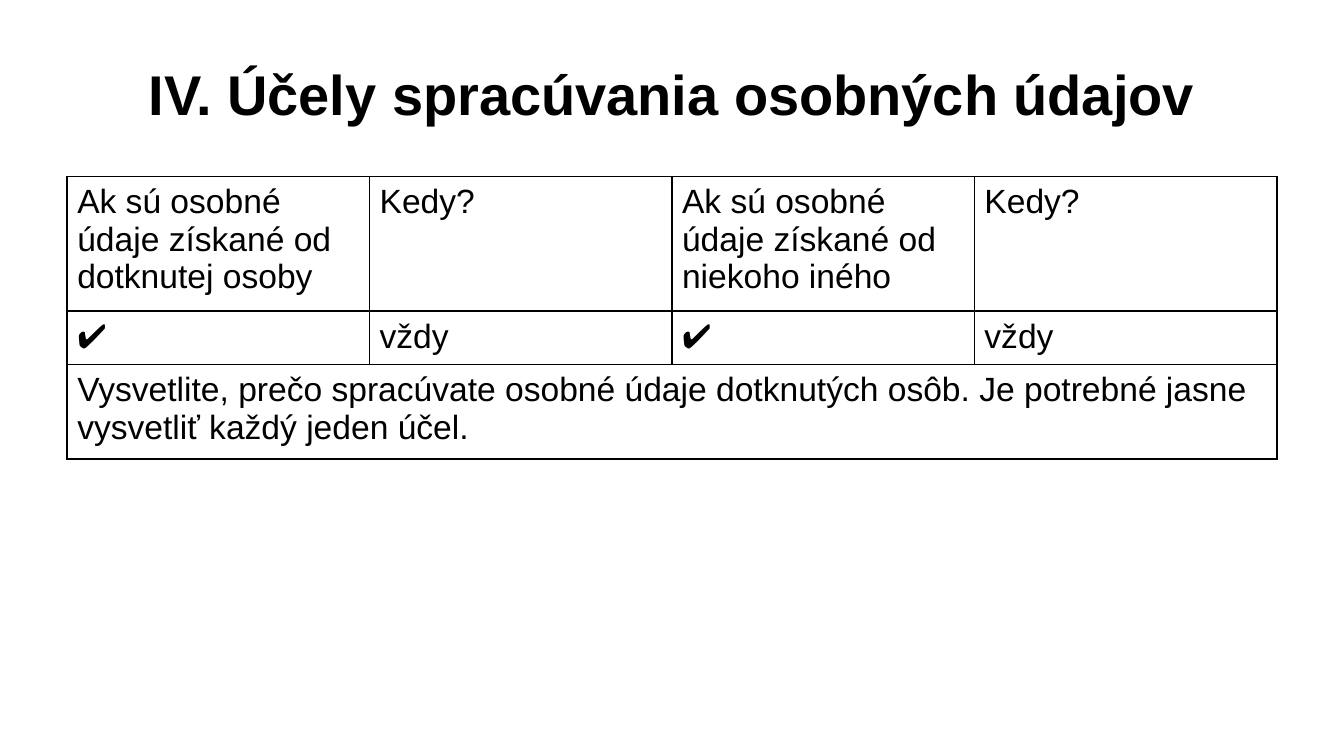
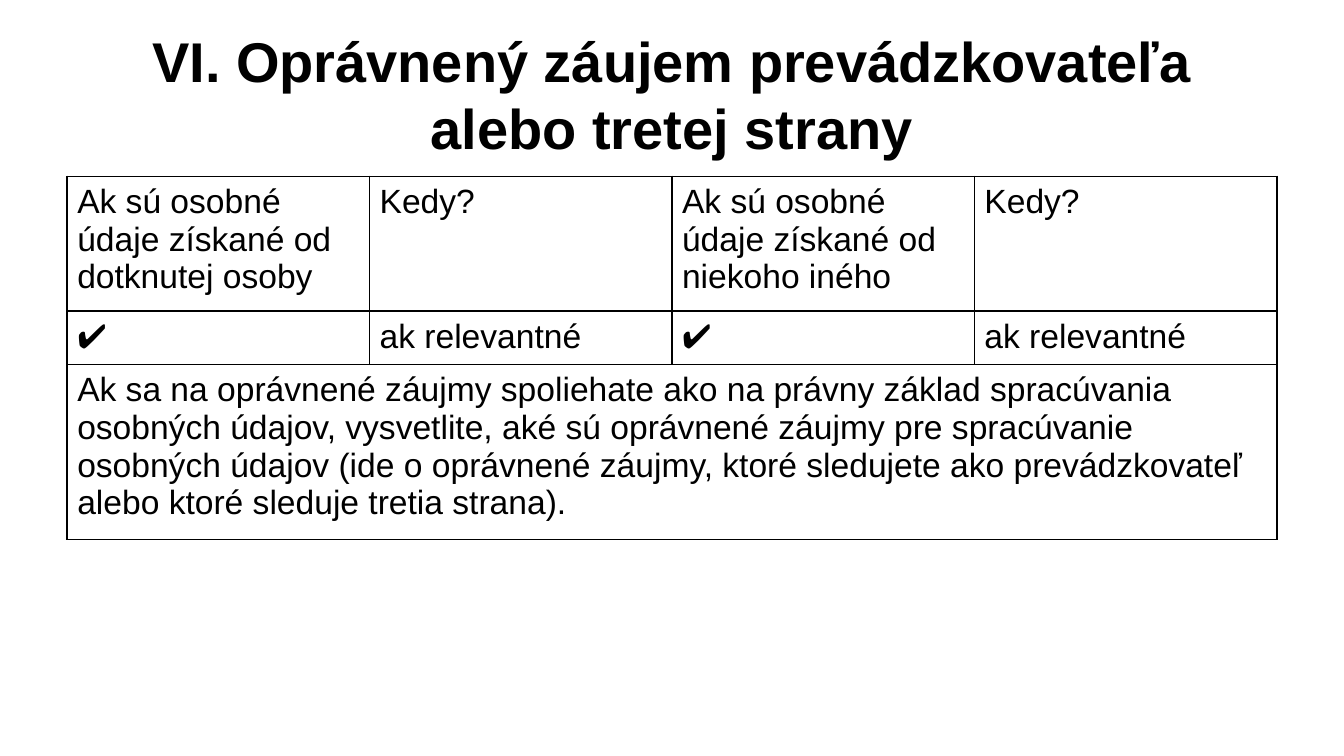
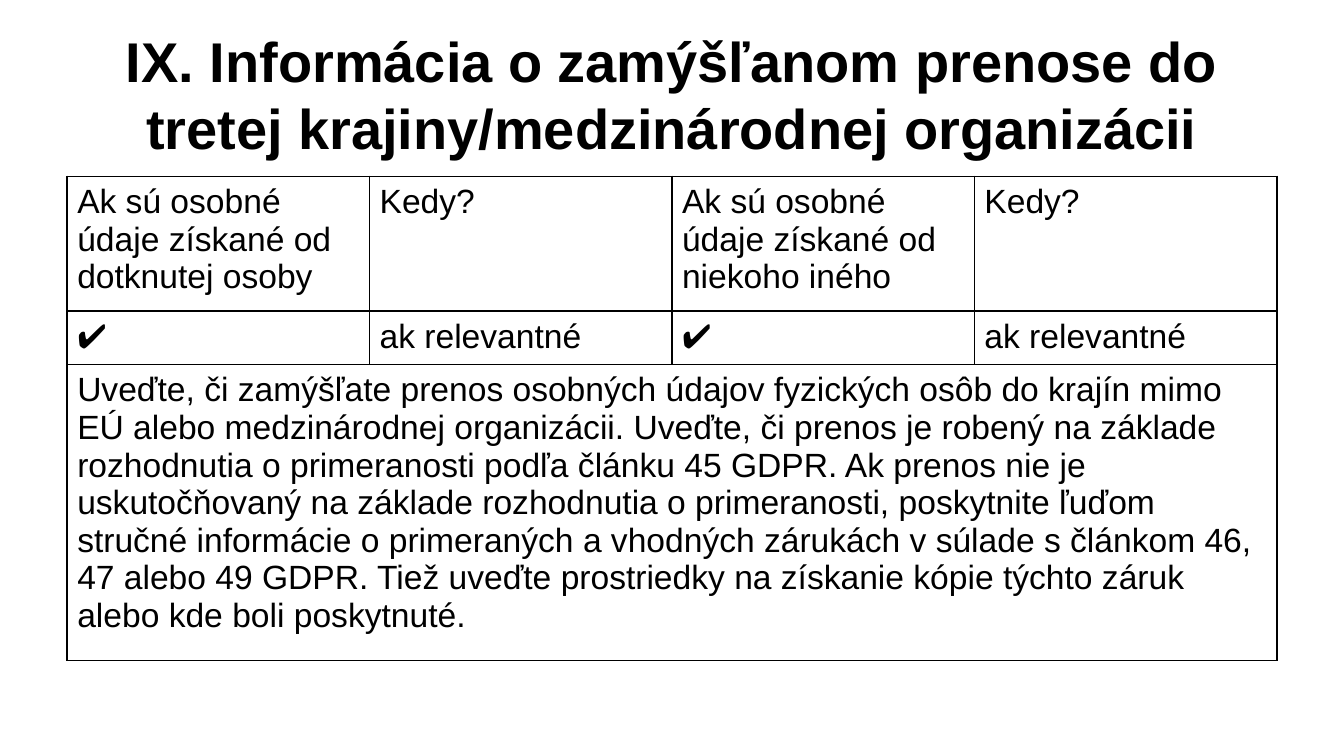
from lxml import etree
from pptx import Presentation
from pptx.dml.color import RGBColor
from pptx.enum.text import MSO_ANCHOR, PP_ALIGN
from pptx.oxml.ns import qn
from pptx.util import Pt

MIDDLE = MSO_ANCHOR.MIDDLE
CENTER = PP_ALIGN.CENTER
LEFT = PP_ALIGN.LEFT

BLACK = RGBColor(0x00, 0x00, 0x00)
FONT = "Arial"
MARGIN = 36
CONTENT_WIDTH = 648
COLUMNS = 4

HEADINGS = [
    "Ak sú osobné údaje získané od dotknutej osoby",
    "Kedy?",
    "Ak sú osobné údaje získané od niekoho iného",
    "Kedy?",
]

TOPICS = [
    (
        "IV. Účely spracúvania osobných údajov",
        "vždy",
        "Vysvetlite, prečo spracúvate osobné údaje dotknutých osôb. "
        "Je potrebné jasne vysvetliť každý jeden účel.",
        39.6,
    ),
    (
        "VI. Oprávnený záujem prevádzkovateľa alebo tretej strany",
        "ak relevantné",
        "Ak sa na oprávnené záujmy spoliehate ako na právny základ spracúvania "
        "osobných údajov, vysvetlite, aké sú oprávnené záujmy pre spracúvanie "
        "osobných údajov (ide o oprávnené záujmy, ktoré sledujete ako "
        "prevádzkovateľ alebo ktoré sleduje tretia strana).",
        72,
    ),
    (
        "IX. Informácia o zamýšľanom prenose do tretej krajiny/medzinárodnej "
        "organizácii",
        "ak relevantné",
        "Uveďte, či zamýšľate prenos osobných údajov fyzických osôb do krajín "
        "mimo EÚ alebo medzinárodnej organizácii. Uveďte, či prenos je robený "
        "na základe rozhodnutia o primeranosti podľa článku 45 GDPR. Ak prenos "
        "nie je uskutočňovaný na základe rozhodnutia o primeranosti, poskytnite "
        "ľuďom stručné informácie o primeraných a vhodných zárukách v súlade "
        "s článkom 46, 47 alebo 49 GDPR. Tiež uveďte prostriedky na získanie "
        "kópie týchto záruk alebo kde boli poskytnuté.",
        104.4,
    ),
]


class Deck:
    def __init__(self):
        self.presentation = Presentation()
        self.presentation.slide_width = Pt(720)
        self.presentation.slide_height = Pt(405)
        self.slide = None

    def new_slide(self):
        blank = self.presentation.slide_layouts[6]
        self.slide = self.presentation.slides.add_slide(blank)

    def set_text(self, frame, text, size, bold=False, align=LEFT):
        frame.text = text
        frame.word_wrap = True
        paragraph = frame.paragraphs[0]
        paragraph.alignment = align
        font = paragraph.runs[0].font
        font.name = FONT
        font.size = Pt(size)
        font.bold = bold
        font.color.rgb = BLACK

    def title(self, text):
        heading = self.slide.shapes.add_textbox(
            Pt(MARGIN), Pt(16.2), Pt(CONTENT_WIDTH), Pt(67.5)
        )
        heading.text_frame.vertical_anchor = MIDDLE
        self.set_text(heading.text_frame, text, 30, bold=True, align=CENTER)

    def style_cell(self, cell):
        cell.margin_left = cell.margin_right = Pt(5.4)
        cell.margin_top = cell.margin_bottom = Pt(3.6)
        properties = cell._tc.get_or_add_tcPr()
        for side in ("a:lnL", "a:lnR", "a:lnT", "a:lnB"):
            border = etree.SubElement(properties, qn(side), w=str(Pt(1)))
            paint = etree.SubElement(border, qn("a:solidFill"))
            etree.SubElement(paint, qn("a:srgbClr"), val=str(BLACK))
        cell.fill.background()

    def duty_table(self, timing, explanation, explanation_height):
        rows = [HEADINGS, ["✔", timing] * 2, [explanation]]
        heights = [61.2, 25.2, explanation_height]
        table = self.slide.shapes.add_table(
            len(rows), COLUMNS, Pt(MARGIN), Pt(94.5),
            Pt(CONTENT_WIDTH), Pt(sum(heights)),
        ).table
        table.first_row = False
        table.horz_banding = False
        for row, height in zip(table.rows, heights):
            row.height = Pt(height)
        for cell in table.iter_cells():
            self.style_cell(cell)
        table.cell(2, 0).merge(table.cell(2, COLUMNS - 1))
        for row_index, texts in enumerate(rows):
            for column_index, text in enumerate(texts):
                cell = table.cell(row_index, column_index)
                self.set_text(cell.text_frame, text, 18)


def main():
    deck = Deck()
    for title, timing, explanation, explanation_height in TOPICS:
        deck.new_slide()
        deck.title(title)
        deck.duty_table(timing, explanation, explanation_height)
    deck.presentation.save("out.pptx")


if __name__ == "__main__":
    main()
